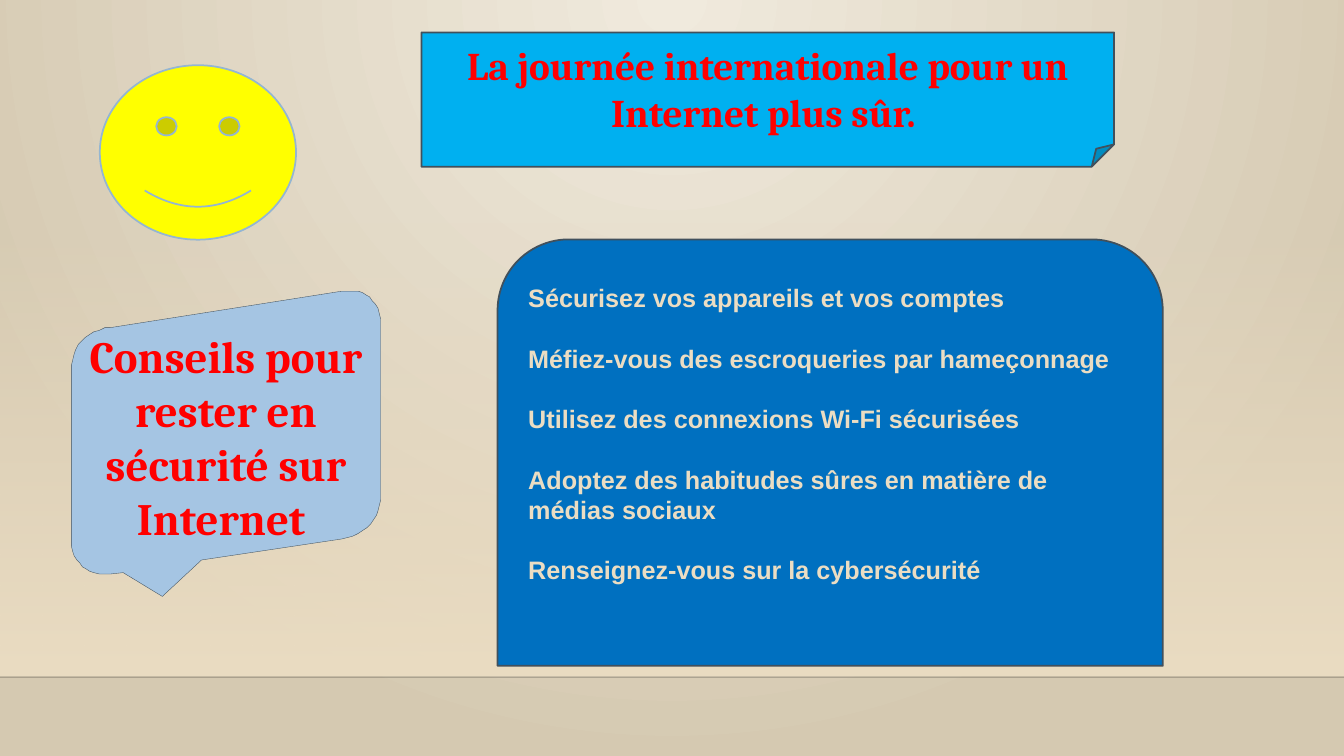
from dataclasses import dataclass

from lxml import etree
from pptx import Presentation
from pptx.dml.color import RGBColor
from pptx.enum import shapes as kinds, text as modes
from pptx.oxml.ns import qn
from pptx.util import Pt


@dataclass(frozen=True)
class Theme:
    glow: str = "F0EADD"
    edge: str = "D5C9B1"
    sand: str = "EBDDC3"
    black: str = "000001"
    red: str = "FF0000"
    yellow: str = "FFFF00"
    cyan: str = "00B0F0"
    blue: str = "0070C0"
    sky: str = "A5C5E3"
    rim: str = "94B6D2"
    slate: str = "41505C"
    serif: str = "Cambria"
    sans: str = "Arial"
    title: int = 28
    call: int = 32
    body: int = 18


T = Theme()
WIDE, HIGH = 960, 540
TIPS = [
    "Sécurisez vos appareils et vos comptes",
    "Méfiez-vous des escroqueries par hameçonnage",
    "Utilisez des connexions Wi-Fi sécurisées",
    "Adoptez des habitudes sûres en matière de médias sociaux",
    "Renseignez-vous sur la cybersécurité",
]


def rgb(code):
    return RGBColor.from_string(code)


def fade(color, share):
    """Give an XML colour element an opacity in percent."""
    etree.SubElement(color, qn("a:alpha")).set("val", str(share * 1000))


def blend(fill, *codes):
    fill.gradient()
    for stop, code in zip(fill.gradient_stops, codes):
        stop.color.rgb = rgb(code)


def paint(shape, fill, line, width=1.25):
    shape.shadow.inherit = False
    shape.fill.solid()
    shape.fill.fore_color.rgb = rgb(fill)
    shape.line.color.rgb = rgb(line)
    shape.line.width = Pt(width)


def draw(slide, kind, box, fill, line):
    shape = slide.shapes.add_shape(kind, *map(Pt, box))
    paint(shape, fill, line)
    return shape


def write(shape, *lines, font, size, color, align="CENTER", anchor="MIDDLE",
          top=3.6, bottom=3.6, pitch=None, gap=0):
    frame = shape.text_frame
    frame.word_wrap = True
    frame.vertical_anchor = getattr(modes.MSO_ANCHOR, anchor)
    frame.margin_top, frame.margin_bottom = Pt(top), Pt(bottom)
    for i, words in enumerate(lines):
        para = frame.add_paragraph() if i else frame.paragraphs[0]
        para.alignment = getattr(modes.PP_ALIGN, align)
        if pitch:
            para.line_spacing = Pt(pitch)
        para.space_before = Pt(gap if i else 0)
        run = para.add_run()
        run.text = words
        run.font.name, run.font.size, run.font.bold = font, Pt(size), True
        run.font.color.rgb = rgb(color)


def bend(start, pull, end, steps=12):
    """Points of a quadratic curve from start to end."""
    for i in range(steps + 1):
        t = i / steps
        yield tuple((1 - t) ** 2 * a + 2 * t * (1 - t) * b + t * t * c
                    for a, b, c in zip(start, pull, end))


def bubble(slide):
    """Slanted speech bubble with rounded corners."""
    dots = [
        *bend((50.8, 265), (52, 238), (79, 233.5)),
        *bend((244, 208), (270, 205), (272.5, 232)),
        *bend((272.5, 352), (271, 380), (244, 385)),
        (144, 400), (115.5, 426.5), (88.5, 409),
        *bend((79, 410.5), (53, 411), (50.8, 386)),
    ]
    pen = slide.shapes.build_freeform(*dots[0], scale=Pt(1))
    pen.add_line_segments(dots[1:], close=True)
    shape = pen.convert_to_shape()
    paint(shape, T.sky, T.slate, 0.25)
    return shape


def scene(slide):
    """Wall with a round glow, and the floor line."""
    blend(slide.background.fill, T.glow, T.edge)
    grad = slide.element.find(".//" + qn("a:gradFill"))
    grad.remove(grad.find(qn("a:lin")))
    halo = etree.SubElement(grad, qn("a:path"))
    halo.set("path", "circle")
    rect = etree.SubElement(halo, qn("a:fillToRect"))
    for side, share in zip("lrb", (43, 43, 100)):
        rect.set(side, str(share * 1000))

    wall = draw(slide, kinds.MSO_SHAPE.RECTANGLE, (0, 158.4, WIDE, 324),
                T.sand, T.sand)
    wall.line.fill.background()
    blend(wall.fill, T.sand, T.sand)
    wall.fill.gradient_angle = 270
    fade(wall.element.find(".//" + qn("a:srgbClr")), 0)

    floor = slide.shapes.add_connector(
        kinds.MSO_CONNECTOR.STRAIGHT, 0, Pt(483.8), Pt(WIDE), Pt(483.8))
    floor.line.color.rgb = rgb(T.black)
    floor.line.width = Pt(1)
    fade(floor.element.find(".//" + qn("a:srgbClr")), 20)
    etree.SubElement(floor.element.spPr, qn("a:effectLst"))


def main():
    deck = Presentation()
    deck.slide_width, deck.slide_height = Pt(WIDE), Pt(HIGH)
    slide = deck.slides.add_slide(deck.slide_layouts[6])
    scene(slide)
    draw(slide, kinds.MSO_SHAPE.SMILEY_FACE, (71.3, 46.6, 140.2, 124.6),
         T.yellow, T.rim)
    title = draw(slide, kinds.MSO_SHAPE.FOLDED_CORNER,
                 (301, 23.2, 494.8, 95.9), T.cyan, T.slate)
    write(title, "La journée internationale pour un Internet plus sûr. ",
          font=T.serif, size=T.title, color=T.red)
    write(bubble(slide), "Conseils pour rester en sécurité sur Internet ",
          font=T.serif, size=T.call, color=T.red, bottom=14)
    card = draw(slide, kinds.MSO_SHAPE.ROUND_2_SAME_RECTANGLE,
                (355.4, 171, 475.2, 304.6), T.blue, T.slate)
    write(card, *TIPS, font=T.sans, size=T.body, color=T.sand, align="LEFT",
          anchor="TOP", top=16, pitch=21.6, gap=21.6)
    deck.save("out.pptx")


if __name__ == "__main__":
    main()
